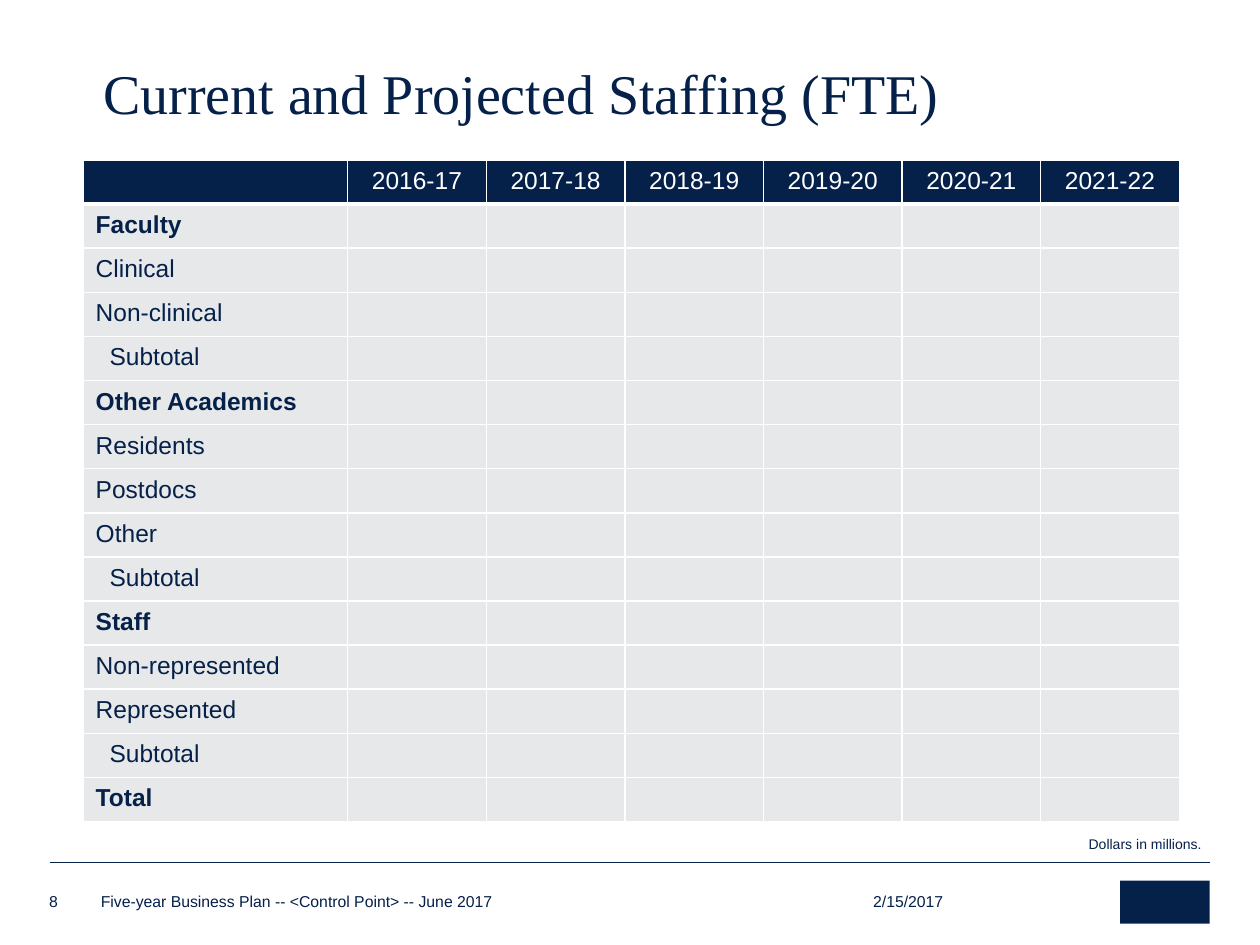
from dataclasses import dataclass
from lxml import etree
from pptx import Presentation
from pptx.dml.color import RGBColor as RGB
from pptx.enum.shapes import MSO_CONNECTOR as CONN, MSO_SHAPE as SHAPE
from pptx.enum.text import MSO_ANCHOR as ANCHOR, PP_ALIGN as ALIGN
from pptx.oxml import parse_xml
from pptx.oxml.ns import nsdecls, qn
from pptx.util import Inches, Pt


@dataclass(frozen=True)
class Theme:
    navy: RGB = RGB.from_string("052049")
    white: RGB = RGB.from_string("FFFFFF")
    band: RGB = RGB.from_string("E7E8E9")
    serif: str = "Times New Roman"
    sans: str = "Arial"
    title: int = 32
    body: int = 14
    footer: int = 9
    note: int = 8


T = Theme()


def write(tf, text, size, color=T.navy, font=T.sans, bold=False, spacing=1.0, align=ALIGN.LEFT):
    p = tf.paragraphs[0]
    p.alignment, p.line_spacing = align, spacing
    r = p.add_run()
    r.text = text
    for name, value in {"size": Pt(size), "name": font, "bold": bold}.items():
        setattr(r.font, name, value)
    r.font.color.rgb = color


def set_borders(cell, widths):
    tc_pr = cell._tc.get_or_add_tcPr()
    for side, width in widths.items():
        tc_pr.append(parse_xml(
            f'<a:ln{side} {nsdecls("a")} w="{Pt(width)}"><a:solidFill>'
            f'<a:srgbClr val="{T.white}"/></a:solidFill></a:ln{side}>'))


prs = Presentation()
prs.slide_width, prs.slide_height = Inches(10), Inches(7.5)
s = prs.slides.add_slide(prs.slide_layouts[6])

rule = s.shapes.add_connector(CONN.STRAIGHT, Inches(0.4), Inches(6.84), Inches(9.6), Inches(6.84))
rule.line.color.rgb = T.navy
rule.line.width = Pt(0.25)
etree.SubElement(rule._element.spPr, qn("a:effectLst"))

mark = s.shapes.add_shape(SHAPE.RECTANGLE, Inches(8.89), Inches(6.99), Inches(0.71), Inches(0.34))
mark.shadow.inherit = False
mark.fill.solid()
mark.fill.fore_color.rgb = T.navy
mark.line.fill.background()

title = s.shapes.add_textbox(Inches(0.72), Inches(0.48), Inches(8.84), Inches(0.57))
title.text_frame.word_wrap = True
title.text_frame.vertical_anchor = ANCHOR.BOTTOM
write(title.text_frame, "Current and Projected Staffing (FTE)", T.title, font=T.serif, spacing=0.85)

small_texts = [
    ("2/15/2017", 6.93, 7.06, 1.01, 0.17, T.footer, ANCHOR.BOTTOM, 1.0),
    ("Five-year Business Plan -- <Control Point> -- June 2017",
     0.8, 7.08, 4.71, 0.15, T.footer, ANCHOR.BOTTOM, 1.0),
    ("8", 0.39, 7.06, 0.27, 0.17, T.footer, ANCHOR.BOTTOM, 1.0),
    ("Dollars in millions.", 8.64, 6.65, 1.66, 0.12, T.note, ANCHOR.TOP, 0.9),
]
for text, x, y, w, h, size, anchor, spacing in small_texts:
    tf = s.shapes.add_textbox(Inches(x), Inches(y), Inches(w), Inches(h)).text_frame
    for name, value in {"word_wrap": True, "vertical_anchor": anchor, "margin_left": 0,
                        "margin_top": 0, "margin_right": 0, "margin_bottom": 0}.items():
        setattr(tf, name, value)
    write(tf, text, size, spacing=spacing)

years = [f"{y}-{y % 100 + 1}" for y in range(2016, 2022)]
groups = {
    "Faculty": ["Clinical", "Non-clinical", "Subtotal"],
    "Other Academics": ["Residents", "Postdocs", "Other", "Subtotal"],
    "Staff": ["Non-represented", "Represented", "Subtotal"],
    "Total": [],
}
labels = [label for group, members in groups.items() for label in [group, *members]]
rows = [["", *years]] + [[label] + [""] * len(years) for label in labels]

table = s.shapes.add_table(len(rows), len(rows[0]), Inches(0.66), Inches(1.27),
                           Inches(8.7), Inches(5.25)).table
for i, column in enumerate(table.columns):
    column.width = Inches(1.1 if i else 2.1)
for i, values in enumerate(rows):
    table.rows[i].height = Inches(0.35)
    header = i == 0
    for j, text in enumerate(values):
        cell = table.cell(i, j)
        set_borders(cell, {"L": 1, "R": 1, "T": 3 if i == 1 else 1, "B": 3 if header else 1})
        cell.fill.solid()
        cell.fill.fore_color.rgb = T.navy if header else T.band
        for name, value in {"vertical_anchor": ANCHOR.MIDDLE, "margin_top": 0, "margin_bottom": 0,
                            "margin_left": Inches(0.21 if text == "Subtotal" else 0.1)}.items():
            setattr(cell, name, value)
        if text:
            write(cell.text_frame, text, T.body, T.white if header else T.navy,
                  bold=text in groups, spacing=0.9, align=ALIGN.CENTER if header else ALIGN.LEFT)

prs.save("out.pptx")
